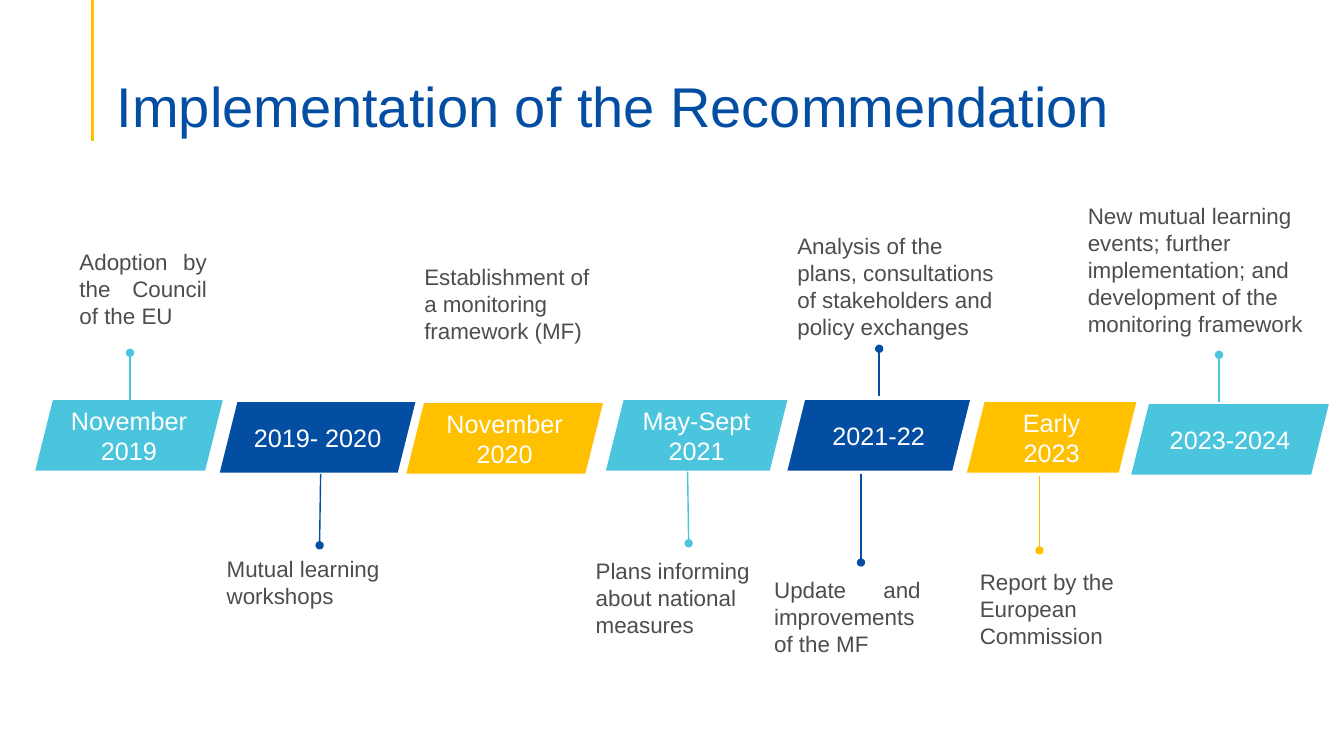
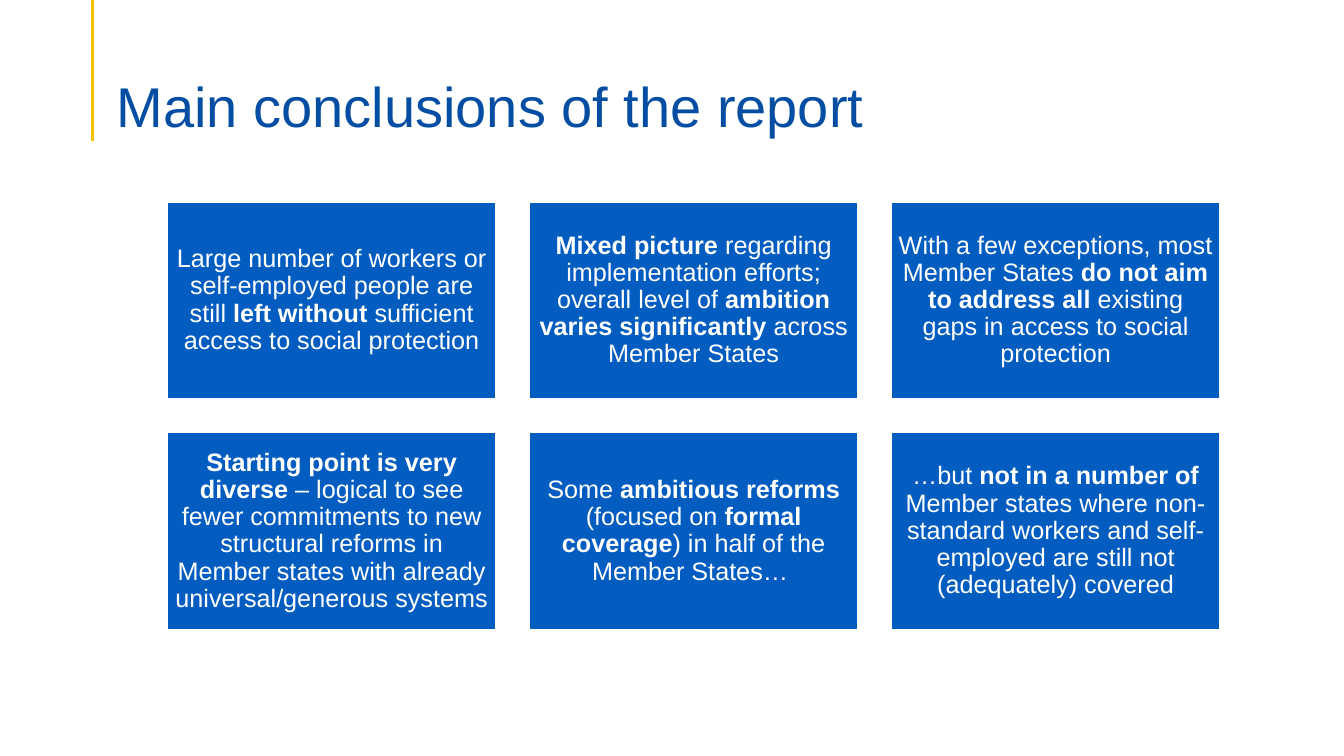
from lxml import etree
from pptx import Presentation, util as u
from pptx.dml.color import RGBColor
from pptx.enum import shapes, text
from pptx.oxml import ns

NAVY = RGBColor(0x03, 0x4E, 0xA2)
BLUE = RGBColor(0x03, 0x5D, 0xC1)
CYAN = RGBColor(0x4B, 0xC5, 0xDE)
YELLOW = RGBColor(0xFF, 0xC0, 0x00)
GREY = RGBColor(0x4D, 0x4D, 0x4D)
WHITE = RGBColor(0xFF, 0xFF, 0xFF)

LEFT, CENTER, JUSTIFY = text.PP_ALIGN.LEFT, text.PP_ALIGN.CENTER, text.PP_ALIGN.JUSTIFY
TOP, MIDDLE, BOTTOM = text.MSO_ANCHOR.TOP, text.MSO_ANCHOR.MIDDLE, text.MSO_ANCHOR.BOTTOM

CELL = u.Inches(1)  # columns and rows of the layout grid
COLUMNS, ROWS = 13.33, 7.5


def cells(*counts):
    """Turn counts of grid columns or rows into lengths."""
    return [int(count * CELL) for count in counts]


def write(shape, paragraphs, size, color, alignment, anchor, spacing=1.0):
    """Fill a shape with paragraphs, each a list of (words, bold) runs."""
    frame = shape.text_frame
    frame.word_wrap = True
    frame.vertical_anchor = anchor
    for index, runs in enumerate(paragraphs):
        paragraph = frame.add_paragraph() if index else frame.paragraphs[0]
        paragraph.alignment = alignment
        paragraph.line_spacing = spacing
        for words, bold in runs:
            run = paragraph.add_run()
            run.text = words
            run.font.name = "Arial"
            run.font.size = u.Pt(size)
            run.font.bold = bold
            run.font.color.rgb = color


presentation = Presentation()
presentation.slide_width, presentation.slide_height = cells(COLUMNS, ROWS)

# Shared title and accent line; the other lines are the stems of the timeline
slides = []
lines = []
for title in ["Implementation of the Recommendation", "Main conclusions of the report"]:
    slide = presentation.slides.add_slide(presentation.slide_layouts[6])
    slides.append(slide)
    lines.append((slide, (0.92, 0, 0.92, 1.4), YELLOW, 2.25, False))
    title_box = slide.shapes.add_textbox(*cells(1.06, 0.53, 11.5, 0.86))
    title_box.text_frame.margin_bottom = 0
    write(title_box, [[(title, False)]], 40, NAVY, LEFT, BOTTOM, 0.9)
timeline, conclusions = slides

# Timeline: left, top, width, colour, lines of the date
PERIOD_HEIGHT = 0.7
periods = [
    (0.35, 3.97, 1.86, CYAN, ["November", "2019"]),
    (2.18, 3.99, 1.94, NAVY, ["2019- 2020"]),
    (4.03, 4.0, 1.95, YELLOW, ["November 2020"]),
    (6.01, 3.97, 1.8, CYAN, ["May-Sept 2021"]),
    (7.81, 3.97, 1.81, NAVY, ["2021-22"]),
    (9.59, 3.99, 1.68, YELLOW, ["Early 2023"]),
    (11.22, 4.01, 1.96, CYAN, ["2023-2024"]),
]
for left, top, width, color, dates in periods:
    period = timeline.shapes.add_shape(
        shapes.MSO_SHAPE.PARALLELOGRAM, *cells(left, top, width, PERIOD_HEIGHT))
    period.shadow.inherit = False
    period.fill.solid()
    period.fill.fore_color.rgb = color
    period.line.fill.background()
    write(period, [[(date, False)] for date in dates], 18, WHITE, CENTER, MIDDLE)

# Events: left, top, width, height, alignment, anchor, words
events = [
    (0.69, 2.4, 1.46, 0.91, JUSTIFY, BOTTOM, "Adoption by the Council of the EU"),
    (4.11, 2.55, 1.86, 0.91, LEFT, BOTTOM, "Establishment of a monitoring framework (MF)"),
    (7.81, 2.24, 2.25, 1.18, LEFT, BOTTOM,
     "Analysis of the plans, consultations of stakeholders and policy exchanges"),
    (10.69, 1.94, 2.42, 1.45, LEFT, BOTTOM,
     "New mutual learning events; further implementation; and development of the "
     "monitoring framework"),
    (2.15, 5.46, 2.26, 0.64, LEFT, TOP, "Mutual learning workshops"),
    (5.81, 5.48, 2.2, 0.91, LEFT, TOP, "Plans informing about national measures"),
    (7.58, 5.69, 1.65, 0.86, JUSTIFY, MIDDLE, "Update and improvements of the MF"),
    (9.62, 5.59, 1.84, 0.91, LEFT, TOP, "Report by the European Commission"),
]
for left, top, width, height, alignment, anchor, words in events:
    event = timeline.shapes.add_textbox(*cells(left, top, width, height))
    write(event, [[(words, False)]], 16, GREY, alignment, anchor)

# Stems run from a period to the dot beside its event
stems = [
    ((1.29, 3.97, 1.29, 3.5), CYAN),
    ((8.72, 3.93, 8.72, 3.46), NAVY),
    ((12.09, 3.99, 12.09, 3.52), CYAN),
    ((3.18, 4.7, 3.17, 5.41), NAVY),
    ((6.82, 4.68, 6.83, 5.39), CYAN),
    ((8.54, 4.7, 8.54, 5.58), NAVY),
    ((10.31, 4.72, 10.31, 5.46), YELLOW),
]
lines += [(timeline, ends, color, 1, True) for ends, color in stems]
for slide, ends, color, weight, dotted in lines:
    line = slide.shapes.add_connector(shapes.MSO_CONNECTOR.STRAIGHT, *cells(*ends))
    line.line.color.rgb = color
    line.line.width = u.Pt(weight)
    if dotted:
        etree.SubElement(line.line._get_or_add_ln(), ns.qn("a:tailEnd"), type="oval")
    etree.SubElement(line._element.spPr, ns.qn("a:effectLst"))

# Conclusions: three columns by two rows of cards
CARD_COLUMNS = 3
CARD_WIDTH, CARD_HEIGHT, CARD_GAP = 3.26, 1.96, 0.33
CARDS_LEFT, CARDS_TOP = 1.66, 2.0
cards = [
    [("Large number of workers or self-employed people are still ", False),
     ("left without ", True),
     ("sufficient access to social protection", False)],
    [("Mixed picture ", True),
     ("regarding implementation efforts; overall level of ", False),
     ("ambition varies significantly ", True),
     ("across Member States", False)],
    [("With a few exceptions, most Member States ", False),
     ("do not aim to address all ", True),
     ("existing gaps in access to social protection", False)],
    [("Starting point is very diverse ", True),
     ("– logical to see fewer commitments to new structural reforms in Member states "
      "with already universal/generous systems", False)],
    [("Some ", False),
     ("ambitious reforms ", True),
     ("(focused on ", False),
     ("formal coverage", True),
     (") in half of the Member States… ", False)],
    [("…but ", False),
     ("not in a number of ", True),
     ("Member states where non-standard workers and self-employed are still not "
      "(adequately) covered", False)],
]
for index, runs in enumerate(cards):
    row, column = divmod(index, CARD_COLUMNS)
    card = conclusions.shapes.add_shape(shapes.MSO_SHAPE.RECTANGLE, *cells(
        CARDS_LEFT + column * (CARD_WIDTH + CARD_GAP),
        CARDS_TOP + row * (CARD_HEIGHT + CARD_GAP),
        CARD_WIDTH, CARD_HEIGHT))
    card.shadow.inherit = False
    card.fill.solid()
    card.fill.fore_color.rgb = BLUE
    card.line.color.rgb = WHITE
    card.line.width = u.Pt(1.5)
    frame = card.text_frame
    frame.margin_left = frame.margin_right = u.Inches(0.07)
    frame.margin_top = frame.margin_bottom = u.Inches(0.07)
    write(card, [runs], 18, WHITE, CENTER, MIDDLE, 0.9)

presentation.save("out.pptx")
